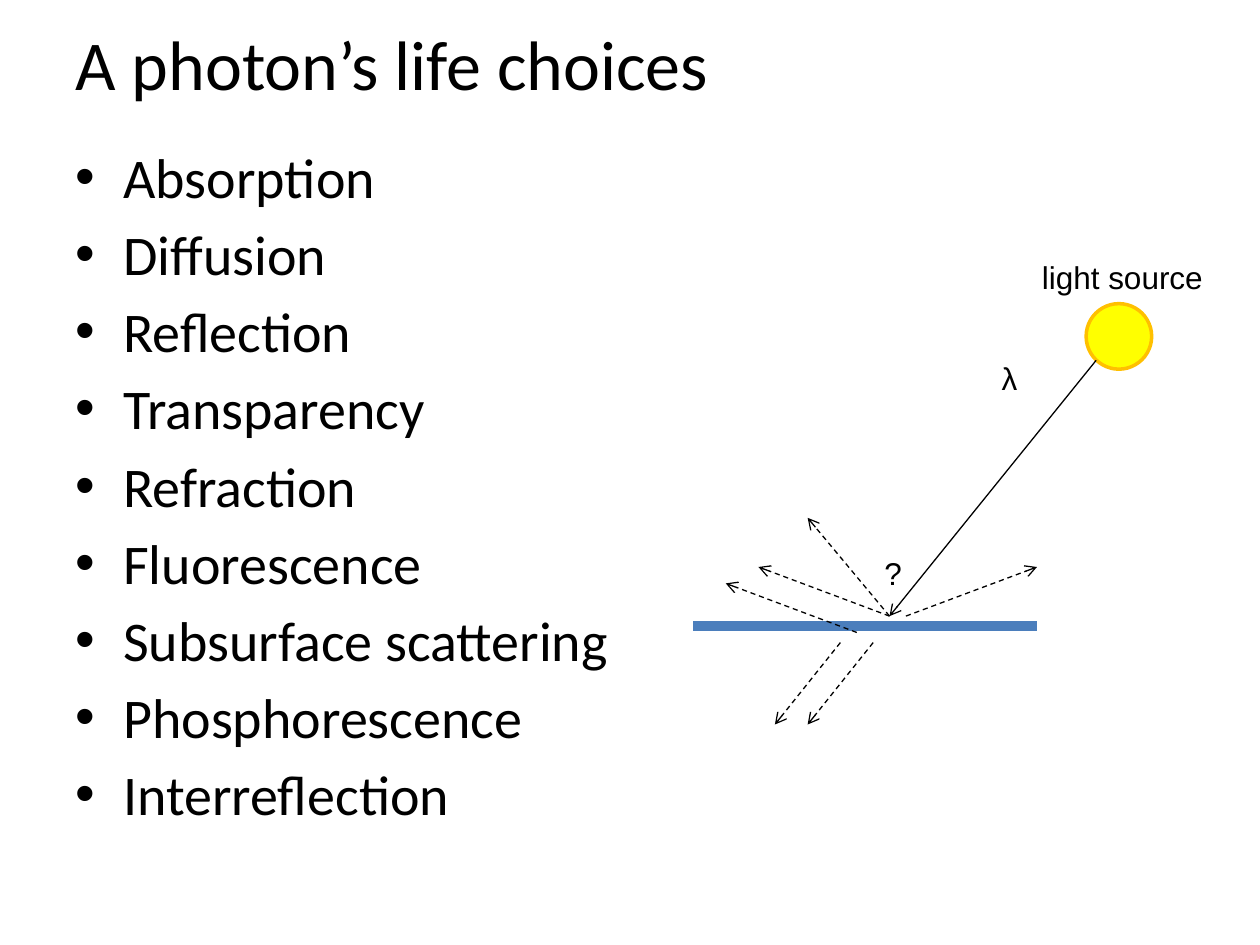
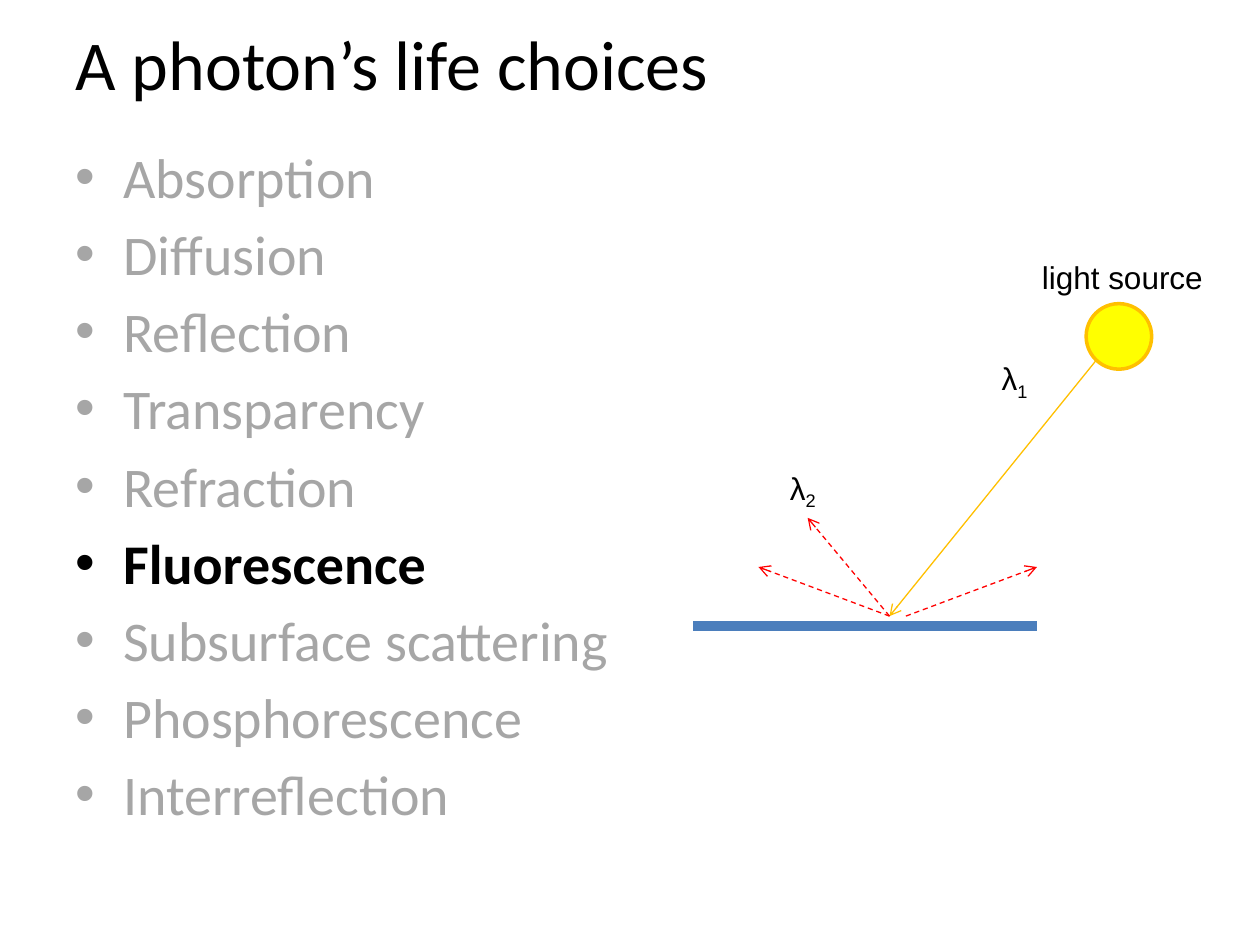
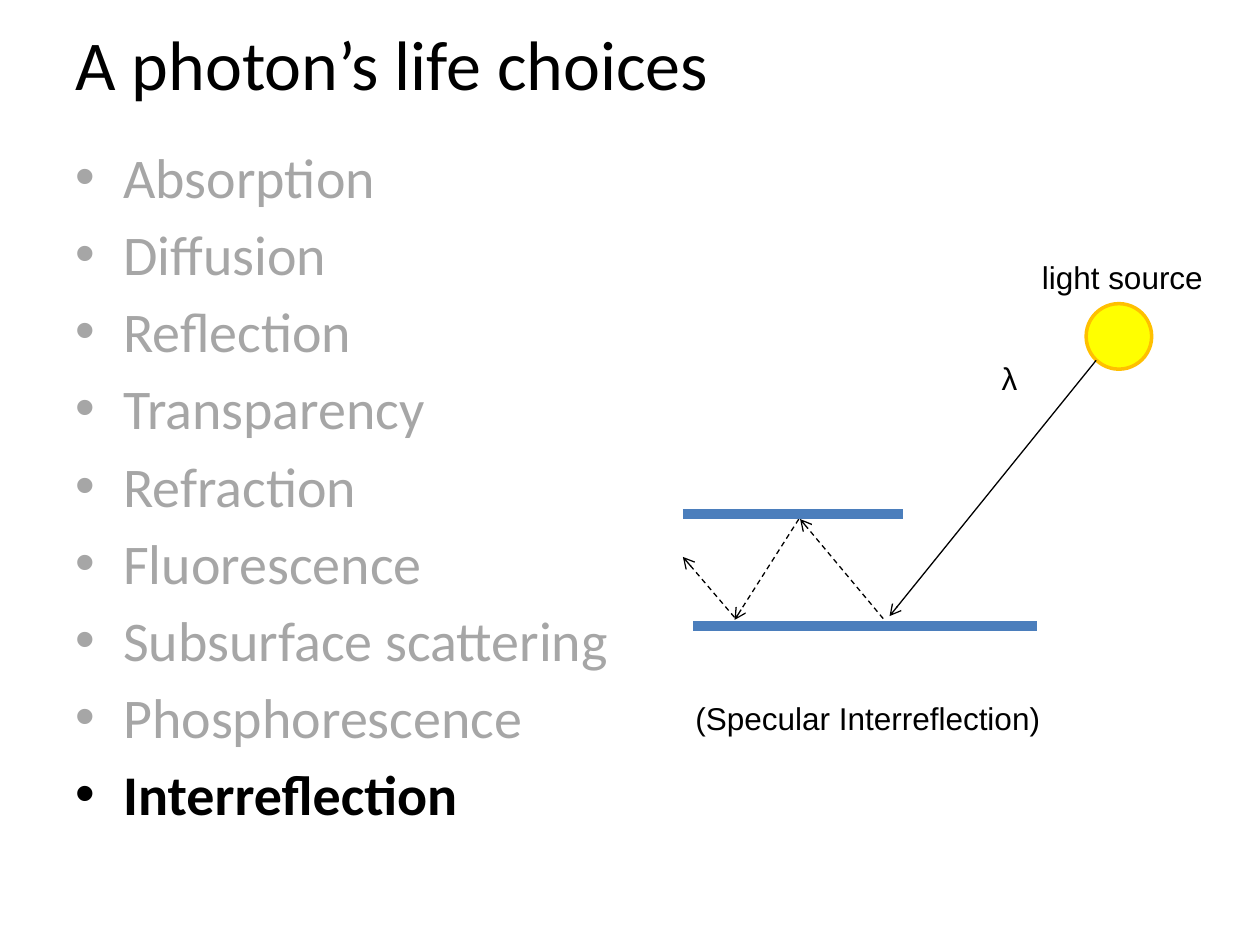
from dataclasses import dataclass

from lxml.etree import SubElement
from pptx import Presentation
from pptx.dml.color import RGBColor
from pptx.enum.dml import MSO_LINE
from pptx.enum.shapes import MSO_CONNECTOR, MSO_SHAPE
from pptx.enum.text import MSO_ANCHOR, PP_ALIGN
from pptx.oxml.ns import qn
from pptx.util import Inches, Pt


@dataclass(frozen=True)
class Theme:
    ink: str = "000000"
    muted: str = "A6A6A6"
    surface: str = "4B7EBC"
    sun: str = "FFFF00"
    amber: str = "FFC000"
    red: str = "FF0000"
    text_font: str = "Calibri"
    label_font: str = "Arial"
    title_size: float = 40
    bullet_size: float = 32
    bullet_gap: float = 5.7
    label_size: float = 18
    ray_width: float = 0.75
    sun_outline: float = 2
    surface_width: float = 6


THEME = Theme()
TITLE = "A photon’s life choices"
CHOICES = (
    "Absorption", "Diffusion", "Reflection", "Transparency", "Refraction",
    "Fluorescence", "Subsurface scattering", "Phosphorescence", "Interreflection",
)

# Boxes on the page: left, top, width, height
TITLE_BOX = (0.5, 0, 9, 1)
LIST_BOX = (0.5, 1.08, 9, 5.62)
DIAGRAM_BOX = (5.4, 2, 4.3, 3.9)

# Points in the diagram, relative to its box
HIT = (1.66, 2.89)
SCATTERED = ((HIT, (1.01, 2.11)), (HIT, (0.62, 2.5)), ((1.79, 2.89), (2.83, 2.5)))
BELOW_SURFACE = (
    ((1.53, 3.1), (1.01, 3.75)),
    ((1.27, 3.1), (0.75, 3.75)),
    ((1.4, 3.02), (0.36, 2.63)),
)
BOUNCES = (
    ((1.61, 2.91), (0.95, 2.12)),
    ((0.94, 2.12), (0.43, 2.92)),
    ((0.43, 2.9), (0.02, 2.42)),
)


def inches(values):
    return [Inches(value) for value in values]


def set_font(font, name, size, color, bold=False):
    font.name, font.size, font.bold = name, Pt(size), bold
    font.color.rgb = RGBColor.from_string(color)


def add_title(page, box):
    title = page.shapes.title
    title.left, title.top, title.width, title.height = inches(box)
    title.text_frame.text = TITLE
    title.text_frame.vertical_anchor = MSO_ANCHOR.MIDDLE
    para = title.text_frame.paragraphs[0]
    para.alignment = PP_ALIGN.LEFT
    set_font(para.font, THEME.text_font, THEME.title_size, THEME.ink)


def add_bullet(para):
    properties = para._p.get_or_add_pPr()
    properties.set("marL", str(Inches(0.38)))
    properties.set("indent", str(-Inches(0.38)))
    SubElement(properties, qn("a:buFont"), typeface=THEME.label_font)
    SubElement(properties, qn("a:buChar"), char="•")


def add_choices(page, box, chosen=None):
    """List every choice; a chosen one is bold and the others are muted."""
    frame = page.shapes.add_textbox(*inches(box)).text_frame
    frame.word_wrap = True
    for index, choice in enumerate(CHOICES):
        para = frame.add_paragraph() if index else frame.paragraphs[0]
        para.text = choice
        para.space_before = Pt(THEME.bullet_gap)
        add_bullet(para)
        color = THEME.ink if chosen in (None, choice) else THEME.muted
        set_font(para.font, THEME.text_font, THEME.bullet_size, color, choice == chosen)


class Diagram:
    """Draws on a page, with all places relative to the given box."""

    def __init__(self, page, box):
        self.shapes = page.shapes
        self.left, self.top = box[:2]

    def place(self, point):
        return inches((self.left + point[0], self.top + point[1]))

    def line(self, start, end, color, width):
        line = self.shapes.add_connector(
            MSO_CONNECTOR.STRAIGHT, *self.place(start), *self.place(end))
        line.line.color.rgb = RGBColor.from_string(color)
        line.line.width = Pt(width)
        SubElement(line._element.spPr, qn("a:effectLst"))
        return line

    def surface(self, start, end):
        self.line(start, end, THEME.surface, THEME.surface_width)

    def ray(self, start, end, color=THEME.ink, dashed=True):
        ray = self.line(start, end, color, THEME.ray_width)
        if dashed:
            ray.line.dash_style = MSO_LINE.DASH
        SubElement(ray.get_or_add_ln(), qn("a:tailEnd"), type="arrow")

    def label(self, point, width, text, subscript=""):
        box = self.shapes.add_textbox(*self.place(point), *inches((width, 0.4)))
        box.text_frame.word_wrap = True
        para = box.text_frame.paragraphs[0]
        para.add_run().text = text
        if subscript:
            span = para.add_run()
            span.text = subscript
            span._r.get_or_add_rPr().set("baseline", "-25000")
        set_font(para.font, THEME.label_font, THEME.label_size, THEME.ink)

    def light_source(self):
        sun = self.shapes.add_shape(
            MSO_SHAPE.OVAL, *self.place((3.22, 0.41)), *inches((0.52, 0.52)))
        sun.shadow.inherit = False
        sun.fill.solid()
        sun.fill.fore_color.rgb = RGBColor.from_string(THEME.sun)
        sun.line.color.rgb = RGBColor.from_string(THEME.amber)
        sun.line.width = Pt(THEME.sun_outline)
        self.label((2.77, 0), 1.5, "light source")


def add_scene(page, box, rays, ray_color=THEME.ink, light_color=THEME.ink, subscript=""):
    """Draw the lit surface, the incoming light and the dashed outgoing rays."""
    diagram = Diagram(page, box)
    diagram.surface((0.1, 2.97), (2.83, 2.97))
    diagram.light_source()
    diagram.ray((3.3, 0.86), HIT, light_color, dashed=False)
    diagram.label((2.45, 0.8), 0.45, "λ", subscript)
    for start, end in rays:
        diagram.ray(start, end, ray_color)
    return diagram


def add_page(deck, chosen=None):
    page = deck.slides.add_slide(deck.slide_layouts[5])
    add_title(page, TITLE_BOX)
    add_choices(page, LIST_BOX, chosen)
    return page


def add_overview(deck):
    page = add_page(deck)
    diagram = add_scene(page, DIAGRAM_BOX, SCATTERED + BELOW_SURFACE)
    diagram.label((1.52, 2.35), 0.36, "?")


def add_fluorescence(deck):
    page = add_page(deck, "Fluorescence")
    diagram = add_scene(page, DIAGRAM_BOX, SCATTERED, THEME.red, THEME.amber, "1")
    diagram.label((0.77, 1.67), 0.45, "λ", "2")


def add_interreflection(deck):
    page = add_page(deck, "Interreflection")
    diagram = add_scene(page, DIAGRAM_BOX, BOUNCES)
    diagram.surface((0.02, 2.08), (1.77, 2.08))
    diagram.label((0.02, 3.5), 3.05, "(Specular Interreflection)")


def main():
    deck = Presentation()
    deck.slide_width, deck.slide_height = inches((10, 7.5))
    add_overview(deck)
    add_fluorescence(deck)
    add_interreflection(deck)
    deck.save("out.pptx")


if __name__ == "__main__":
    main()
